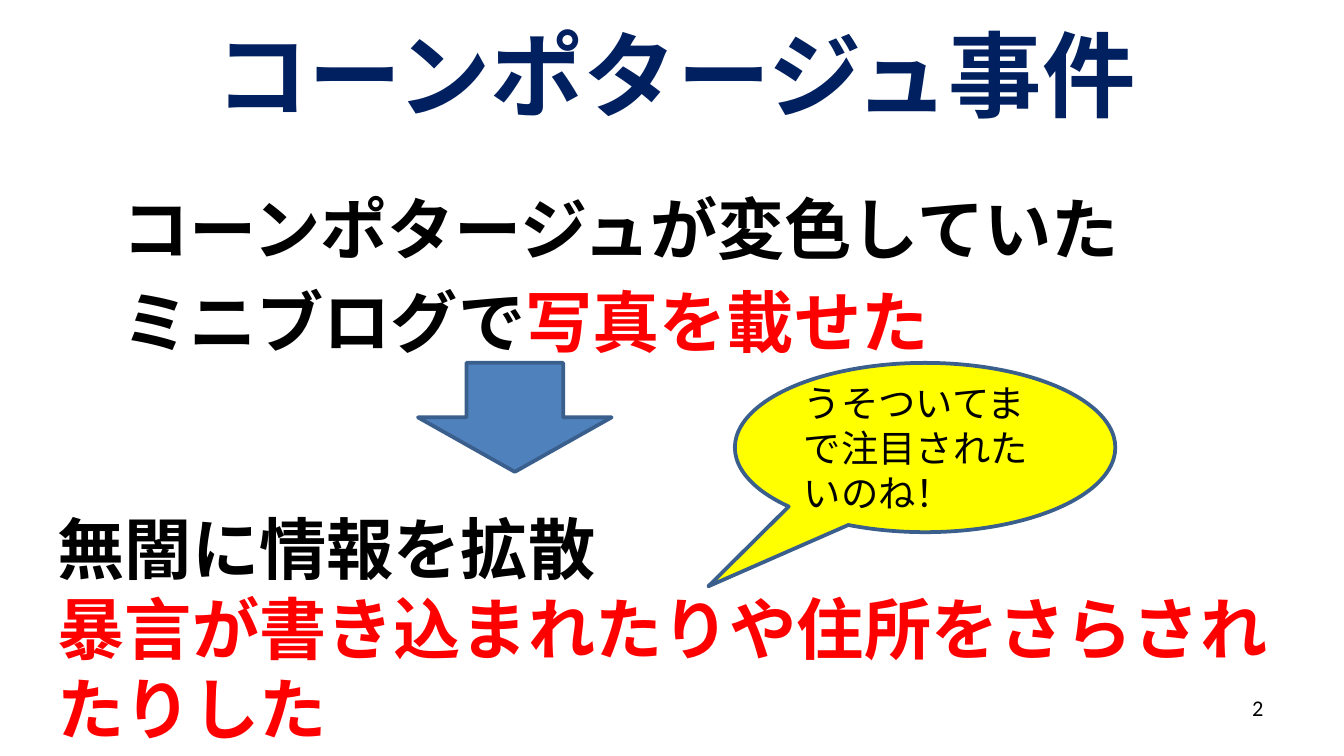
import pptx
import pptx.dml.color
import pptx.enum.shapes
import pptx.enum.text
import pptx.oxml
import pptx.oxml.ns
import pptx.util

Cm = pptx.util.Cm
Pt = pptx.util.Pt
Align = pptx.enum.text.PP_ALIGN
Anchor = pptx.enum.text.MSO_ANCHOR
Shape = pptx.enum.shapes.MSO_SHAPE

HUES = {
    "navy": "002060",
    "black": "000000",
    "red": "FF0000",
    "blue": "4F81BD",
    "edge": "3A5F8C",
    "yellow": "FFFF00",
}
GOTHIC = "Noto Sans CJK JP"


def color(name):
    return pptx.dml.color.RGBColor.from_string(HUES[name])


def add_run(para, text, size, hue, bold, face):
    run = para.add_run()
    run.text = text
    font = run.font
    font.size = Pt(size)
    font.bold = bold
    font.name = face
    font.color.rgb = color(hue)
    east = pptx.oxml.parse_xml(
        f'<a:ea {pptx.oxml.ns.nsdecls("a")} typeface="{face}"/>')
    run.font._element.find(pptx.oxml.ns.qn("a:latin")).addnext(east)


def write(frame, lines, size, bold=True, face=GOTHIC, align=Align.LEFT,
          anchor=Anchor.TOP, pitch=None, gap=0):
    frame.word_wrap = True
    frame.vertical_anchor = anchor
    for i, line in enumerate(lines):
        para = frame.paragraphs[0] if i == 0 else frame.add_paragraph()
        para.alignment = align
        para.space_before = Pt(gap if i else 0)
        if pitch:
            para.line_spacing = Pt(pitch)
        for text, hue in line:
            add_run(para, text, size, hue, bold, face)


def add_text(slide, spot, lines, size, top=0.1, side=0.18, **style):
    frame = slide.shapes.add_textbox(*map(Cm, spot)).text_frame
    frame.margin_left = frame.margin_right = Cm(side)
    frame.margin_top, frame.margin_bottom = Cm(top), Cm(0.1)
    write(frame, lines, size, **style)


def add_form(slide, kind, spot, fill):
    form = slide.shapes.add_shape(kind, *map(Cm, spot))
    form.shadow.inherit = False
    form.fill.solid()
    form.fill.fore_color.rgb = color(fill)
    form.line.color.rgb = color("edge")
    form.line.width = Pt(2)
    return form


def main():
    deck = pptx.Presentation()
    deck.slide_width, deck.slide_height = Cm(25.4), Cm(14.29)
    slide = deck.slides.add_slide(deck.slide_layouts[6])

    add_text(slide, (0.91, 9.37, 23.72, 4.8), [
        [("無闇に情報を拡散", "black")],
        [("暴言が書き込まれたりや住所をさらされたりした", "red")],
    ], 36, top=0.22, pitch=43)
    add_text(slide, (0.91, 0, 23.72, 2.77),
             [[("コーンポタージュ事件", "navy")]], 50,
             align=Align.CENTER, anchor=Anchor.MIDDLE)
    add_text(slide, (2.13, 3.33, 21.49, 3.53), [
        [("コーンポタージュが変色していた", "black")],
        [("ミニブログで", "black"), ("写真を載せた", "red")],
    ], 36, top=0.22, pitch=43, gap=7)

    add_form(slide, Shape.DOWN_ARROW, (7.9, 6.86, 3.66, 2.06), "blue")
    add_text(slide, (18.8, 13, 5.33, 0.76), [[("2", "black")]], 12,
             side=0.25, bold=False, face="Calibri", align=Align.RIGHT,
             anchor=Anchor.MIDDLE)

    bubble = add_form(slide, Shape.OVAL_CALLOUT,
                      (13.89, 6.86, 7.19, 3.2), "yellow")
    bubble.adjustments[0] = -0.57
    bubble.adjustments[1] = 0.82
    write(bubble.text_frame, [[("うそついてまで注目されたいのね！", "black")]],
          20, bold=False, anchor=Anchor.MIDDLE, pitch=24)

    deck.save("out.pptx")


if __name__ == "__main__":
    main()
